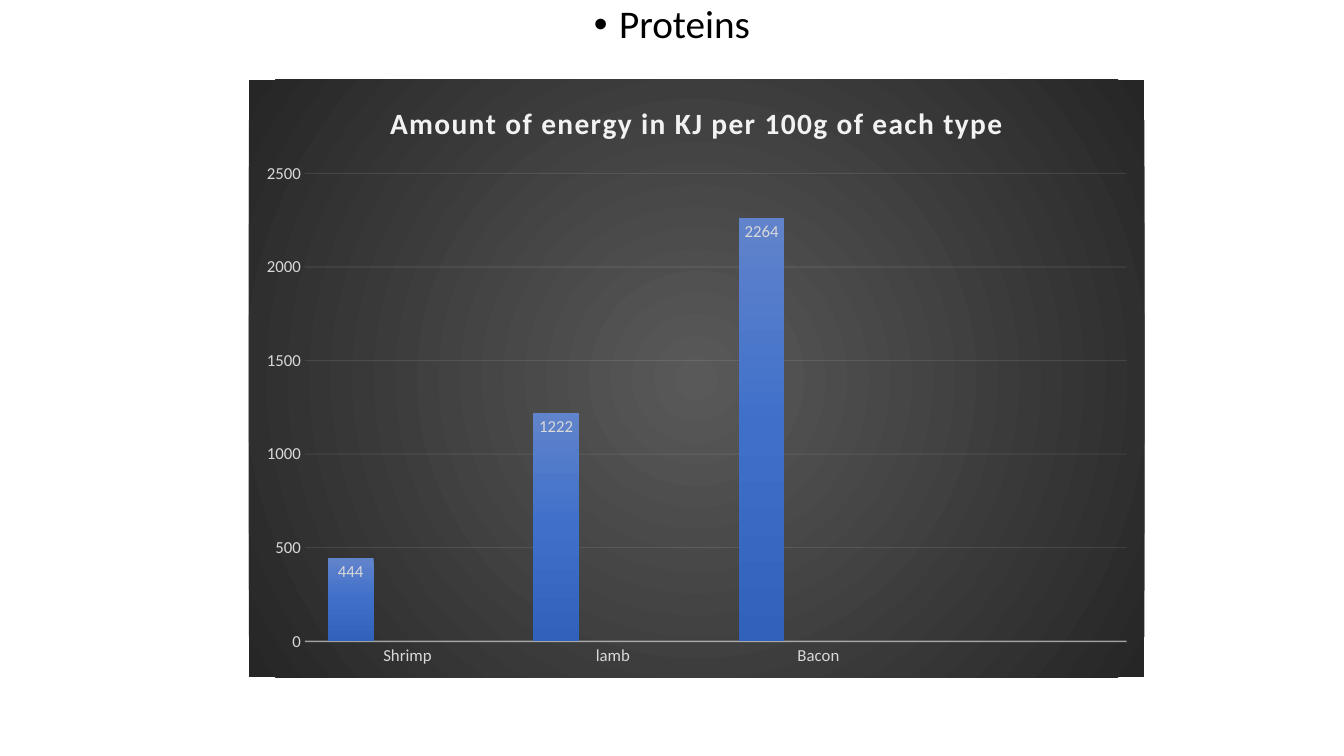
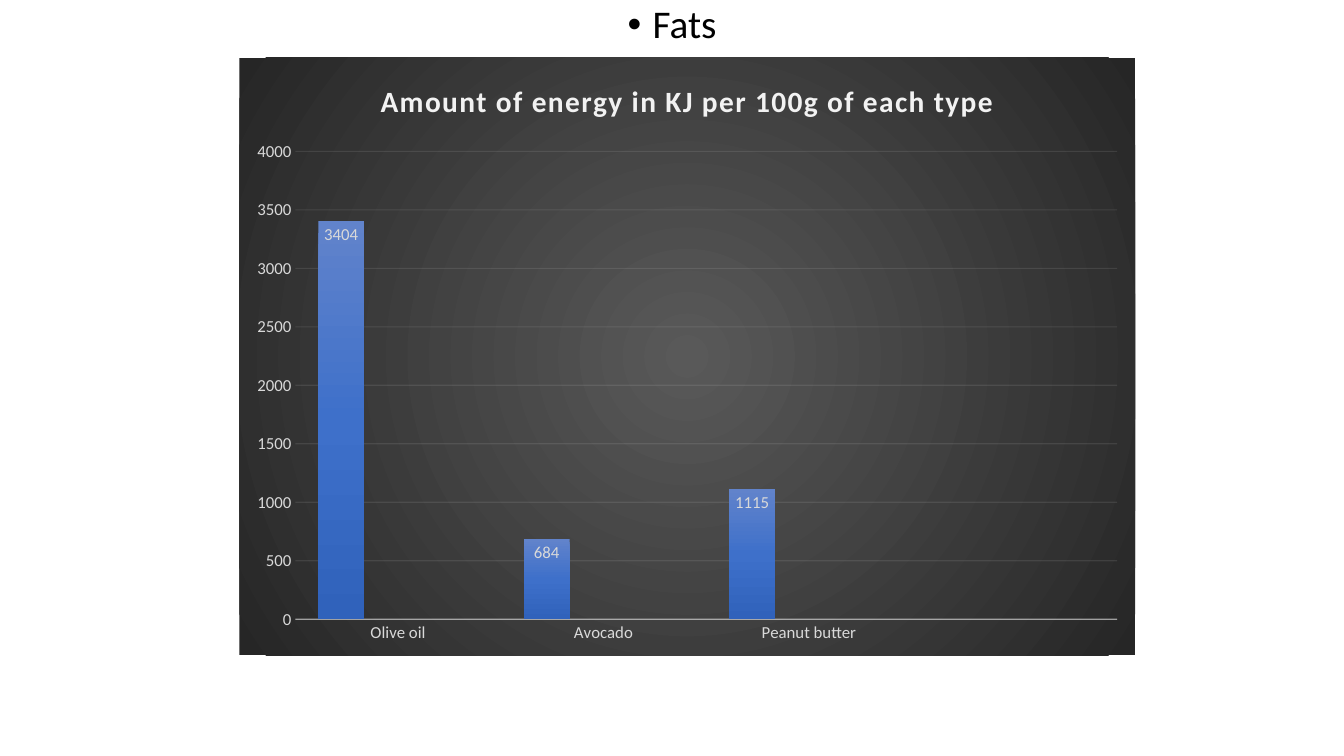
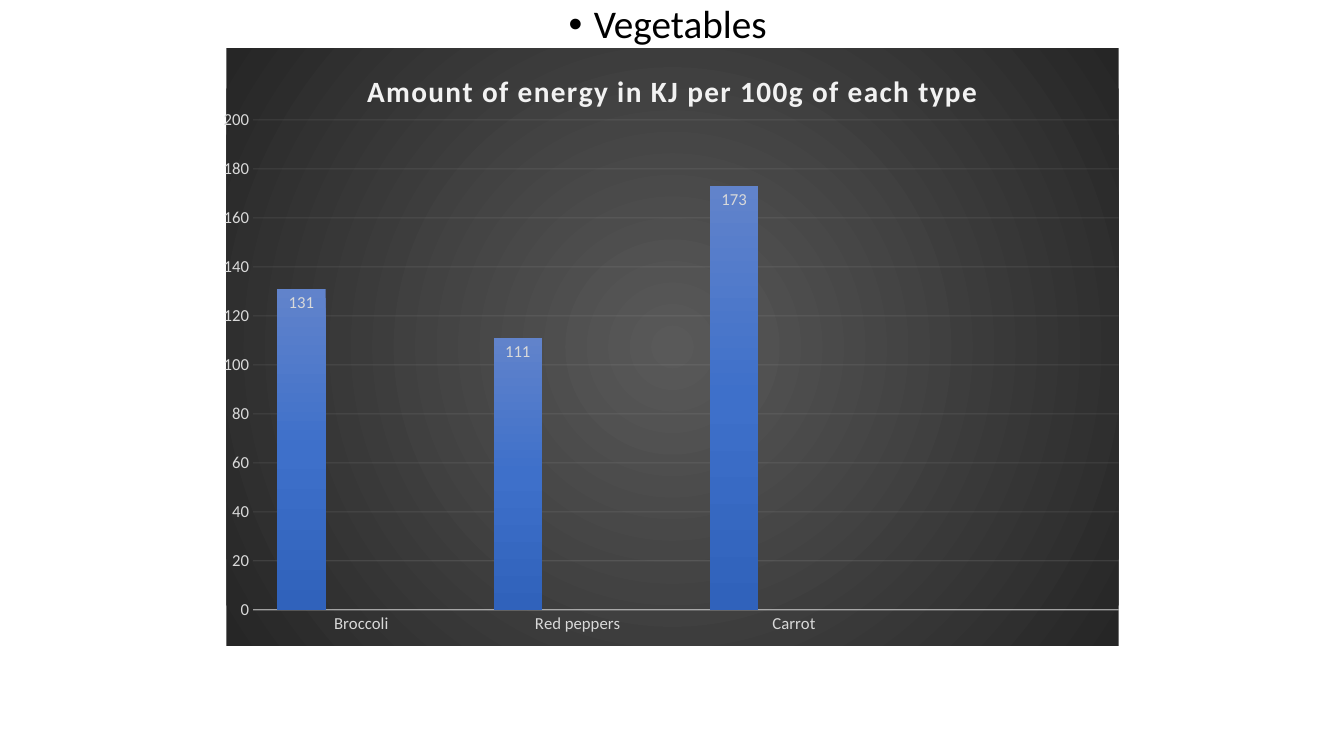
from pptx import Presentation
from pptx.chart.data import CategoryChartData
from pptx.dml.color import RGBColor
from pptx.enum.chart import XL_CHART_TYPE, XL_LABEL_POSITION, XL_TICK_MARK
from pptx.enum.text import MSO_ANCHOR, MSO_AUTO_SIZE, PP_ALIGN
from pptx.oxml import parse_xml
from pptx.oxml.ns import nsdecls, qn
from pptx.util import Pt
from lxml import etree

PX = 9525  # EMU per px, 96 px to the inch
SLIDE_W, SLIDE_H = 1280, 720
CHART_W, CHART_H = 853, 569
FONT = "Calibri"
COLORS = {"text": "000000", "title": "F2F2F2", "label": "D9D9D9", "line": "F2F2F2"}
PANEL_STOPS = [(0, "595959"), (100, "262626")]
SERIES_STOPS = [
    [(0, "6183CB"), (50, "3E70CA"), (100, "3062BB")],
    [(0, "F18C57"), (50, "F67B28"), (100, "E56C19")],
    [(0, "AFAFAF"), (50, "A5A5A5"), (100, "939393")],
]
DOWNWARD = '<a:lin ang="5400000" scaled="0"/>'
FROM_CENTRE = ('<a:path path="circle"><a:fillToRect l="50000" t="50000" '
               'r="50000" b="50000"/></a:path>')
CHART_TITLE = "Amount of energy in KJ per 100g of each type"

# heading, chart left and top, categories, values, inner plot box (x, y, w, h)
SLIDES = [
    ("Proteins", (237, 76), ["Shrimp", "lamb", "Bacon"], [444, 1222, 2264], None),
    ("Fats", (228, 55), ["Olive oil", "Avocado", "Peanut butter"],
     [3404, 684, 1115], None),
    ("Vegetables ", (213, 46), ["Broccoli", "Red peppers", "Carrot"],
     [131, 111, 173], (0.03, 0.12, 0.97, 0.82)),
]


def rgb(name):
    return RGBColor.from_string(COLORS[name])


def set_font(font, size, color, bold=False):
    font.name, font.size, font.bold = FONT, Pt(size), bold
    font.color.rgb = rgb(color)


def grad_fill(stops, direction):
    gs = "".join(f'<a:gs pos="{pos * 1000}"><a:srgbClr val="{color}"/></a:gs>'
                 for pos, color in stops)
    return parse_xml(f'<a:gradFill {nsdecls("a")} rotWithShape="1">'
                     f'<a:gsLst>{gs}</a:gsLst>{direction}</a:gradFill>')


def no_line():
    return parse_xml(f'<a:ln {nsdecls("a")}><a:noFill/></a:ln>')


def style_line(line, width, opacity, owner, route):
    """Draw a line that lets part of the panel show through."""
    line.width = Pt(width)
    line.color.rgb = rgb("line")
    for clr in owner.xpath(route + "//a:srgbClr"):
        etree.SubElement(clr, qn("a:alpha")).set("val", str(opacity * 1000))


def add_heading(s, text, box):
    """Fill the body placeholder with one centred bullet."""
    s.shapes.title.element.getparent().remove(s.shapes.title.element)
    sp = s.placeholders[1]
    sp.left, sp.top, sp.width, sp.height = (v * PX for v in box)
    tf = sp.text_frame
    tf.word_wrap = True
    tf.auto_size = MSO_AUTO_SIZE.NONE
    tf.vertical_anchor = MSO_ANCHOR.TOP
    p = tf.paragraphs[0]
    p.alignment = PP_ALIGN.CENTER
    p.line_spacing, p.space_before = 0.9, Pt(0)
    pPr = p._p.get_or_add_pPr()
    pPr.set("marL", str(24 * PX))
    pPr.set("indent", str(-24 * PX))
    etree.SubElement(pPr, qn("a:buFont")).set("typeface", "Arial")
    etree.SubElement(pPr, qn("a:buChar")).set("char", "•")
    r = p.add_run()
    r.text = text
    set_font(r.font, 28, "text")


def style_panel(chart, plot_box):
    """Dark radial panel, clear plot area and an optional fixed plot box."""
    chart_el = chart._chartSpace.find(qn("c:chart"))
    panel = parse_xml(f'<c:spPr {nsdecls("c", "a")}/>')
    panel.append(grad_fill(PANEL_STOPS, FROM_CENTRE))
    panel.append(no_line())
    chart_el.addnext(panel)

    plot_area = chart_el.find(qn("c:plotArea"))
    clear = etree.SubElement(plot_area, qn("c:spPr"))
    etree.SubElement(clear, qn("a:noFill"))
    clear.append(no_line())
    if plot_box:
        for old in plot_area.findall(qn("c:layout")):
            plot_area.remove(old)
        layout = parse_xml(f'<c:layout {nsdecls("c")}><c:manualLayout/></c:layout>')
        settings = [("layoutTarget", "inner"), ("xMode", "edge"), ("yMode", "edge")]
        for tag, val in settings + list(zip("xywh", plot_box)):
            etree.SubElement(layout[0], qn(f"c:{tag}")).set("val", str(val))
        plot_area.insert(0, layout)


def style_title(chart):
    chart.has_title = True
    r = chart.chart_title.text_frame.paragraphs[0].add_run()
    r.text = CHART_TITLE
    set_font(r.font, 21, "title", bold=True)
    r._r.get_or_add_rPr().set("spc", "100")


def style_axes(chart):
    cat, val = chart.category_axis, chart.value_axis
    for axis in (cat, val):
        axis.major_tick_mark = axis.minor_tick_mark = XL_TICK_MARK.NONE
        set_font(axis.tick_labels.font, 12, "label")
    style_line(cat.format.line, 1, 54, cat._element, "c:spPr")
    val.format.line.fill.background()
    val.has_major_gridlines = True
    style_line(val.major_gridlines.format.line, 0.75, 10,
               val._element, "c:majorGridlines")


def style_series(plot):
    plot.gap_width, plot.overlap = 100, -24
    plot.vary_by_categories = False
    for series, stops in zip(plot.series, SERIES_STOPS):
        series.invert_if_negative = False
        series._element.get_or_add_spPr().append(grad_fill(stops, DOWNWARD))
        labels = series.data_labels
        labels.show_value = True
        labels.position = XL_LABEL_POSITION.INSIDE_END
        set_font(labels.font, 12, "label")


def add_energy_chart(s, box, categories, values, plot_box):
    """Column chart with a spare fourth category and two unused series."""
    data = CategoryChartData()
    data.categories = categories + [""]
    data.add_series("Series 1", values + [None])
    for name in ("Series 2", "Series 3"):
        data.add_series(name, [None] * 4)
    chart = s.shapes.add_chart(XL_CHART_TYPE.COLUMN_CLUSTERED,
                               *(v * PX for v in box), data).chart
    chart.has_legend = False
    set_font(chart.font, 10, "text")
    style_title(chart)
    style_axes(chart)
    style_series(chart.plots[0])
    style_panel(chart, plot_box)


def main():
    prs = Presentation()
    prs.slide_width, prs.slide_height = SLIDE_W * PX, SLIDE_H * PX
    for heading, (left, top), categories, values, plot_box in SLIDES:
        s = prs.slides.add_slide(prs.slide_layouts[1])
        add_heading(s, heading, (0, 0, SLIDE_W, SLIDE_H))
        add_energy_chart(s, (left, top, CHART_W, CHART_H),
                         categories, values, plot_box)
    prs.save("out.pptx")


if __name__ == "__main__":
    main()
